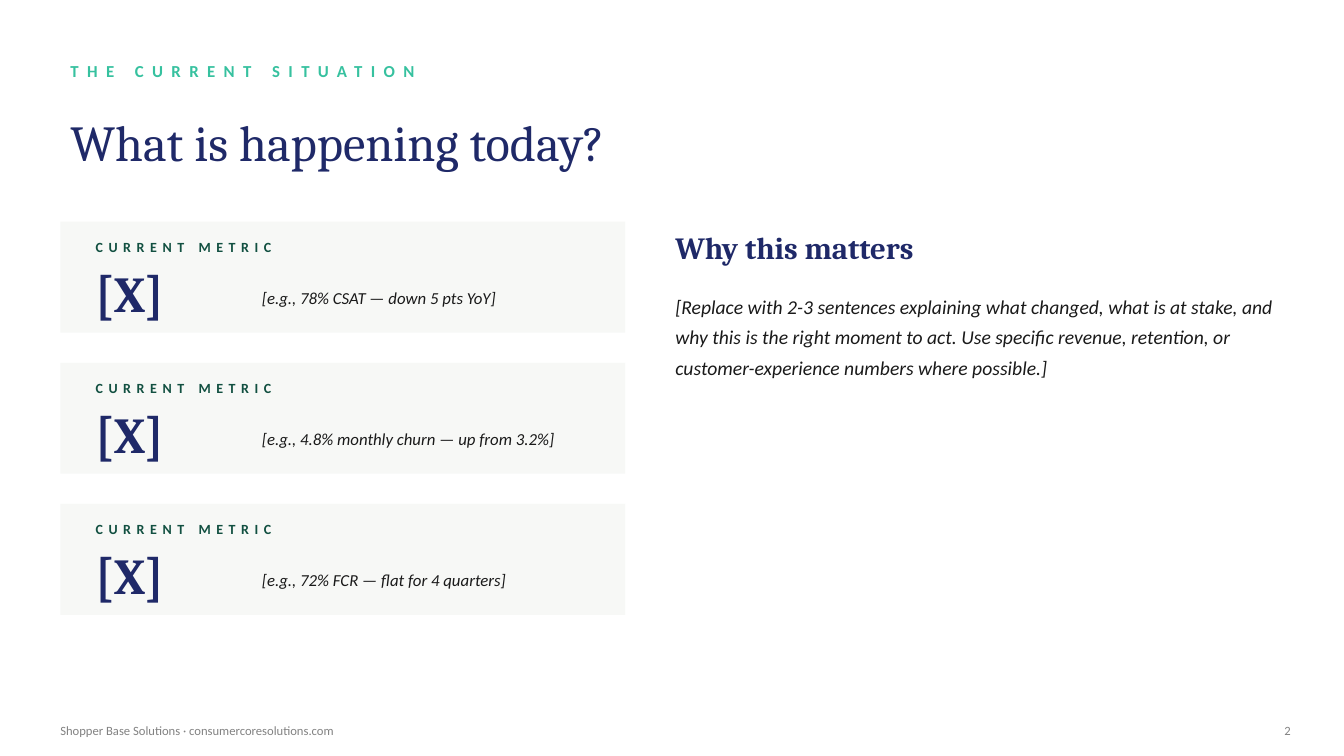
from pptx import Presentation
from pptx.dml.color import RGBColor as RGB
from pptx.enum.shapes import MSO_SHAPE as Shape
from pptx.enum.text import MSO_ANCHOR as Anchor, PP_ALIGN as Align
from pptx.util import Pt

PX = 9144  # EMU per px, 100 px to the inch

theme = {
    "head": "Cambria", "body": "Calibri",
    "navy": "1F2968", "mint": "36C19F", "green": "125041",
    "ink": "1A1A1A", "gray": "828282", "card": "F7F8F6",
    "title": 36, "sub": 22, "text": 14, "note": 12, "label": 10, "foot": 9,
}

deck = Presentation()
deck.slide_width, deck.slide_height = 1333 * PX, 750 * PX
slide = deck.slides.add_slide(deck.slide_layouts[6])


def write(text, box, size, color, face="body", bold=False, italic=False,
          track=0, lead=None, align=Align.LEFT, anchor=Anchor.MIDDLE):
    frame = slide.shapes.add_textbox(*(n * PX for n in box)).text_frame
    frame.word_wrap = True
    frame.vertical_anchor = anchor
    para = frame.paragraphs[0]
    para.alignment = align
    if lead:
        para.line_spacing = Pt(lead)
    run = para.add_run()
    run.text = text
    font = run.font
    font.name, font.size = theme[face], Pt(theme[size])
    font.bold, font.italic = bold, italic
    font.color.rgb = RGB.from_string(theme[color])
    if track:
        run._r.get_or_add_rPr().set("spc", str(track * 100))


# Heading
write("THE CURRENT SITUATION", (60, 50, 800, 40), "note", "mint",
      bold=True, track=6)
write("What is happening today?", (60, 95, 1200, 90), "title", "navy",
      face="head")

# Metric cards
notes = [
    "[e.g., 78% CSAT — down 5 pts YoY]",
    "[e.g., 4.8% monthly churn — up from 3.2%]",
    "[e.g., 72% FCR — flat for 4 quarters]",
]
for row, note in enumerate(notes):
    top = 220 + 140 * row
    card = slide.shapes.add_shape(
        Shape.RECTANGLE, 60 * PX, top * PX, 560 * PX, 110 * PX)
    card.shadow.inherit = False
    card.fill.solid()
    card.fill.fore_color.rgb = RGB.from_string(theme["card"])
    card.line.fill.background()
    write("CURRENT METRIC", (85, top + 10, 510, 30), "label", "green",
          bold=True, track=4)
    write("[X]", (85, top + 35, 150, 70), "title", "navy",
          face="head", bold=True)
    write(note, (250, top + 45, 340, 60), "note", "ink", italic=True)

# Reasons
write("Why this matters", (660, 220, 620, 50), "sub", "navy",
      face="head", bold=True)
write("[Replace with 2-3 sentences explaining what changed, what is at stake, "
      "and why this is the right moment to act. Use specific revenue, "
      "retention, or customer-experience numbers where possible.]",
      (660, 280, 620, 350), "text", "ink", italic=True, lead=22,
      anchor=Anchor.TOP)

# Footer
write("Shopper Base Solutions · consumercoresolutions.com",
      (50, 710, 800, 30), "foot", "gray")
write("2", (1250, 710, 40, 30), "foot", "gray", align=Align.RIGHT)

deck.save("out.pptx")
